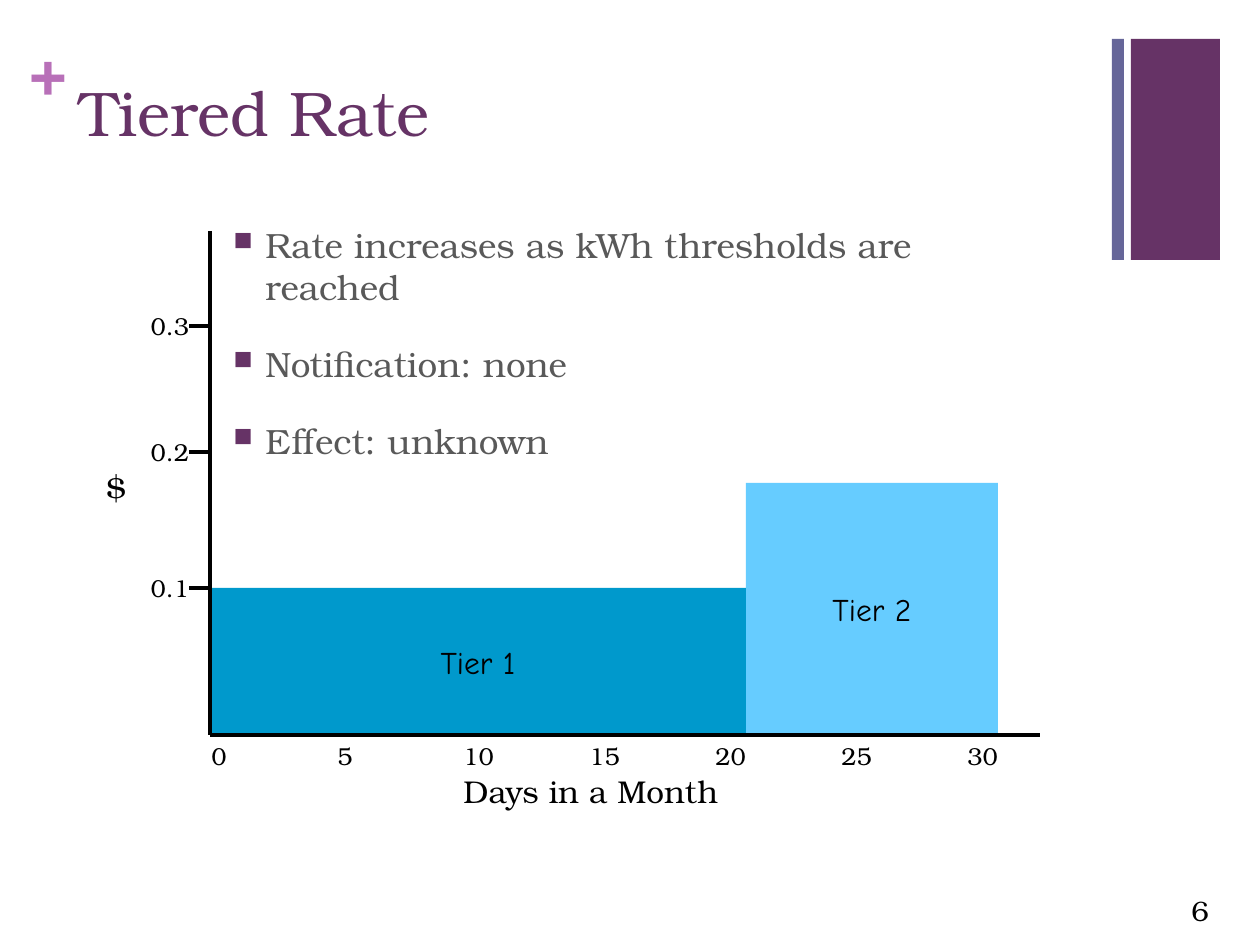
"""Build the Tiered Rate slide: a step chart of price against days in a month."""
from dataclasses import dataclass
from typing import Optional

from lxml.etree import SubElement
from pptx import Presentation
from pptx.dml.color import RGBColor
from pptx.enum.shapes import MSO_CONNECTOR, MSO_SHAPE
from pptx.enum.text import MSO_ANCHOR, PP_ALIGN
from pptx.oxml.ns import qn
from pptx.util import Emu, Pt

PX_PER_INCH = 126
SERIF, HAND = "TeX Gyre Bonum", "Comic Neue"
BLACK, PLUM, GRAY = "000000", "663366", "595959"
AXIS_X, AXIS_Y, AXIS_TOP, AXIS_END = 210, 735, 231, 1040
TICK = 21
STEP_X = 746


@dataclass
class Block:
    x: int
    y: int
    w: int
    h: int
    fill: str
    label: str = ""


@dataclass
class Label:
    text: str
    x: int
    y: int
    w: int
    h: int
    size: int
    color: str = BLACK
    bold: bool = False
    align: PP_ALIGN = PP_ALIGN.LEFT
    anchor: MSO_ANCHOR = MSO_ANCHOR.TOP
    inset: Optional[tuple[int, int]] = None
    bullet: Optional[str] = None
    tab: int = 0


def px(n: int) -> Emu:
    return Emu(round(n * 914400 / PX_PER_INCH))


def rgb(color: str) -> RGBColor:
    return RGBColor.from_string(color)


def add_run(p, text: str, name: str, size: int, color: str, bold: bool = False) -> None:
    r = p.add_run()
    r.text = text
    for key, value in {"name": name, "size": Pt(size), "bold": bold}.items():
        setattr(r.font, key, value)
    r.font.color.rgb = rgb(color)


def add_bullet(p, color: str) -> None:
    pPr = p._p.get_or_add_pPr()
    indent = px(32)
    pPr.set("marL", str(indent))
    pPr.set("indent", str(-indent))
    SubElement(SubElement(pPr, qn("a:buClr")), qn("a:srgbClr"), val=color)
    SubElement(pPr, qn("a:buSzPct"), val="75000")
    SubElement(pPr, qn("a:buChar"), char="■")


def add_tabs(p, step: int, count: int) -> None:
    tabs = SubElement(p._p.get_or_add_pPr(), qn("a:tabLst"))
    for i in range(1, count + 1):
        SubElement(tabs, qn("a:tab"), pos=str(px(step * i)), algn="l")


def add_block(s, b: Block) -> None:
    sp = s.shapes.add_shape(MSO_SHAPE.RECTANGLE, px(b.x), px(b.y), px(b.w), px(b.h))
    sp.shadow.inherit = False
    sp.fill.solid()
    sp.fill.fore_color.rgb = rgb(b.fill)
    sp.line.fill.background()
    if b.label:
        tf = sp.text_frame
        tf.word_wrap = False
        tf.vertical_anchor = MSO_ANCHOR.MIDDLE
        p = tf.paragraphs[0]
        p.alignment = PP_ALIGN.CENTER
        add_run(p, b.label, HAND, 18, BLACK)


def add_label(s, t: Label) -> None:
    tf = s.shapes.add_textbox(px(t.x), px(t.y), px(t.w), px(t.h)).text_frame
    tf.word_wrap = True
    tf.vertical_anchor = t.anchor
    if t.inset:
        across, down = map(px, t.inset)
        margins = {"margin_left": across, "margin_right": across,
                   "margin_top": down, "margin_bottom": down}
        for key, value in margins.items():
            setattr(tf, key, value)
    for i, line in enumerate(t.text.split("\n")):
        p = tf.add_paragraph() if i else tf.paragraphs[0]
        p.alignment = t.align
        if i:
            p.space_before = Pt(20)
        if t.bullet:
            add_bullet(p, t.bullet)
        if t.tab:
            add_tabs(p, t.tab, line.count("\t"))
        add_run(p, line, SERIF, t.size, t.color, t.bold)


def add_line(s, x1: int, y1: int, x2: int, y2: int) -> None:
    c = s.shapes.add_connector(MSO_CONNECTOR.STRAIGHT, px(x1), px(y1), px(x2), px(y2))
    c.line.color.rgb = rgb(BLACK)
    c.line.width = Pt(2)
    SubElement(c._element.spPr, qn("a:effectLst"))


BLOCKS = [
    Block(1131, 39, 89, 221, PLUM),
    Block(1112, 39, 12, 221, "666699"),
    Block(STEP_X, 483, 252, AXIS_Y - 483, "66CCFF", "Tier 2"),
    Block(AXIS_X, 588, STEP_X - AXIS_X, AXIS_Y - 588, "0099CC", "Tier 1"),
]
POINTS = ["Rate increases as kWh thresholds are reached", "Notification: none", "Effect: unknown"]
DAYS = "\t\t".join(str(day) for day in range(0, 31, 5))
LABELS = [
    Label("+", 30, 32, 37, 77, 36, "B870B8", bold=True, inset=(0, 0)),
    Label("6", 1144, 885, 77, 50, 16, align=PP_ALIGN.RIGHT, anchor=MSO_ANCHOR.MIDDLE),
    Label("Tiered Rate", 67, 67, 1041, 154, 36, PLUM),
    Label("\n".join(POINTS), 221, 217, 809, 244, 20, GRAY, bullet=PLUM),
    Label("$", 94, 462, 53, 63, 18),
    Label("Days in a Month", 451, 766, 336, 63, 18),
    Label(DAYS, 199, AXIS_Y, 872, 42, 14, tab=63),
]
PRICES = {"0.1": 588, "0.2": 452, "0.3": 326}


def main() -> None:
    prs = Presentation()
    prs.slide_width, prs.slide_height = px(1260), px(945)
    s = prs.slides.add_slide(prs.slide_layouts[6])
    for block in BLOCKS:
        add_block(s, block)
    for label in LABELS:
        add_label(s, label)
    add_line(s, AXIS_X, AXIS_TOP, AXIS_X, AXIS_Y)
    add_line(s, AXIS_X, AXIS_Y, AXIS_END, AXIS_Y)
    for price, y in PRICES.items():
        add_line(s, AXIS_X, y, AXIS_X - TICK, y)
        add_label(s, Label(price, AXIS_X - 3 * TICK, y - TICK, 2 * TICK, 2 * TICK, 14,
                           align=PP_ALIGN.RIGHT, inset=(0, 6)))
    prs.save("out.pptx")


if __name__ == "__main__":
    main()
